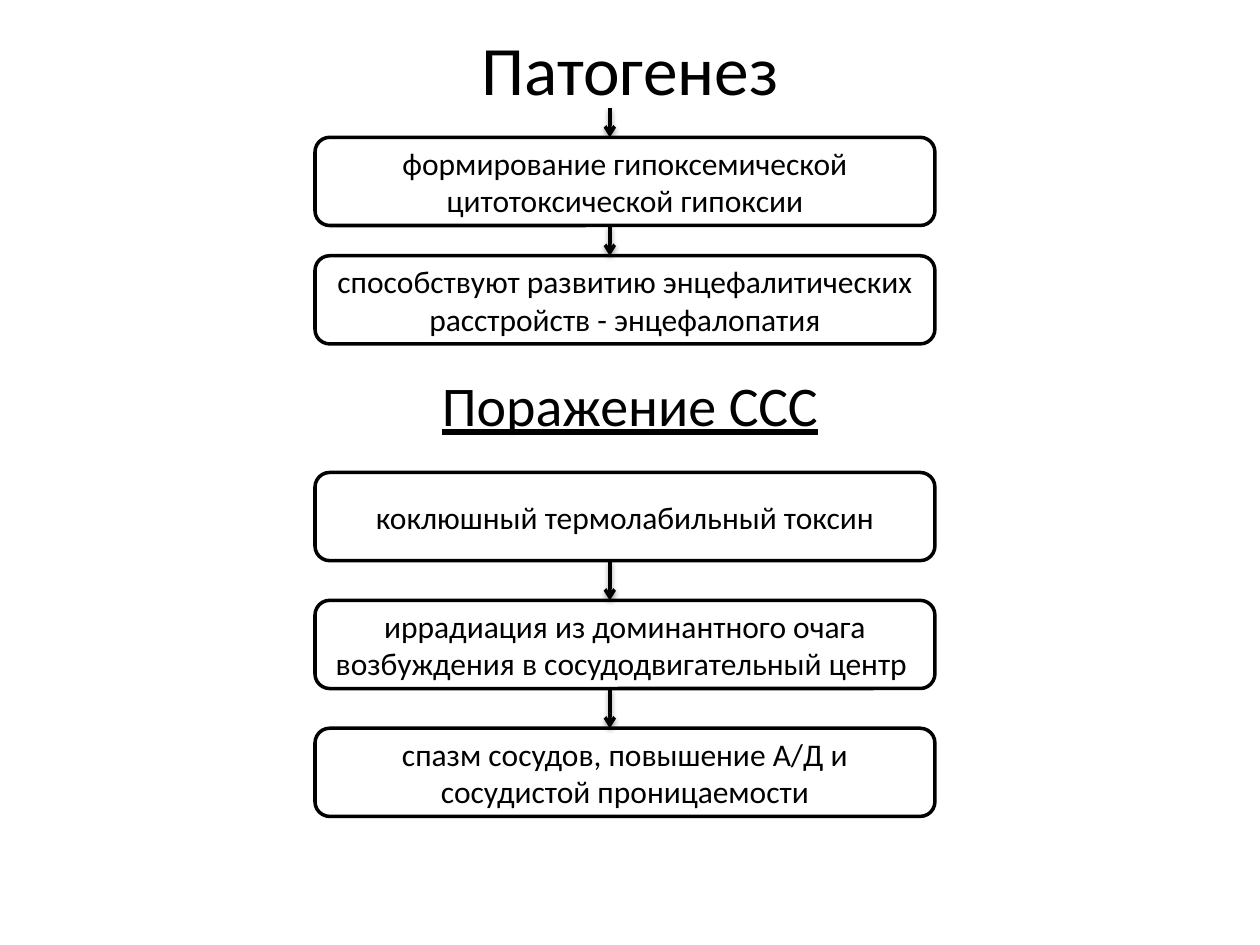
from lxml import etree
from pptx import Presentation
from pptx.dml.color import RGBColor
from pptx.enum.shapes import MSO_CONNECTOR, MSO_SHAPE
from pptx.enum.text import MSO_ANCHOR, PP_ALIGN
from pptx.oxml.ns import qn
from pptx.util import Inches, Pt

COLORS = {"ink": "000000", "paper": "FFFFFF"}
FONT = "Calibri"

# Column shared by all steps, in inches
BOX_LEFT, BOX_WIDTH, BOX_HEIGHT = 2.5, 4.92, 0.7
ARROW_X = 4.84

HYPOXIA_STEPS = [
    "формирование гипоксемической цитотоксической гипоксии",
    "способствуют развитию энцефалитических расстройств - энцефалопатия",
]
VASCULAR_STEPS = [
    "коклюшный термолабильный токсин",
    "иррадиация из доминантного очага возбуждения в сосудодвигательный центр ",
    "спазм сосудов, повышение А/Д и сосудистой проницаемости",
]


def color(name):
    return RGBColor.from_string(COLORS[name])


def set_text(s, text, size, anchor=MSO_ANCHOR.MIDDLE, underline=None):
    tf = s.text_frame
    tf.word_wrap = True
    tf.vertical_anchor = anchor
    tf.text = text
    p = tf.paragraphs[0]
    p.alignment = PP_ALIGN.CENTER
    font = p.runs[0].font
    font.name, font.size, font.underline = FONT, Pt(size), underline
    font.color.rgb = color("ink")


def add_title(slide, text):
    title = slide.shapes.title
    title.left, title.top = Inches(0.5), Inches(0.3)
    title.width, title.height = Inches(9), Inches(0.48)
    set_text(title, text, 39.6)


def add_subtitle(slide, text):
    s = slide.shapes.add_textbox(Inches(0.5), Inches(2.89), Inches(9), Inches(0.64))
    set_text(s, text, 32, MSO_ANCHOR.TOP, underline=True)


def add_step(slide, top, text):
    s = slide.shapes.add_shape(
        MSO_SHAPE.ROUNDED_RECTANGLE,
        Inches(BOX_LEFT), Inches(top), Inches(BOX_WIDTH), Inches(BOX_HEIGHT))
    s.shadow.inherit = False
    s.fill.solid()
    s.fill.fore_color.rgb = color("paper")
    s.line.color.rgb = color("ink")
    s.line.width = Pt(2)
    set_text(s, text, 18)


def add_arrow(slide, top, bottom):
    c = slide.shapes.add_connector(
        MSO_CONNECTOR.STRAIGHT,
        Inches(ARROW_X), Inches(top), Inches(ARROW_X), Inches(bottom))
    c.line.color.rgb = color("ink")
    c.line.width = Pt(2)
    etree.SubElement(c.line._get_or_add_ln(), qn("a:tailEnd"), type="arrow")
    # Soft shadow straight below the line
    effects = etree.SubElement(c._element.spPr, qn("a:effectLst"))
    shadow = etree.SubElement(
        effects, qn("a:outerShdw"), blurRad=str(Pt(3.1)), dist=str(Pt(1.6)),
        dir="5400000", rotWithShape="0")
    tint = etree.SubElement(shadow, qn("a:srgbClr"), val=COLORS["ink"])
    etree.SubElement(tint, qn("a:alpha"), val="38000")


def add_chain(slide, top, pitch, steps):
    """Stack steps at an equal pitch, with an arrow in each gap."""
    for i, text in enumerate(steps):
        y = top + i * pitch
        add_step(slide, y, text)
        if i:
            add_arrow(slide, y - pitch + BOX_HEIGHT, y)


def main():
    prs = Presentation()
    prs.slide_width, prs.slide_height = Inches(10), Inches(7.5)
    slide = prs.slides.add_slide(prs.slide_layouts[5])

    # Title and the chain that follows from it
    add_title(slide, "Патогенез")
    add_arrow(slide, 0.86, 1.09)
    add_chain(slide, 1.09, 0.94, HYPOXIA_STEPS)

    # Cardiovascular section
    add_subtitle(slide, "Поражение ССС")
    add_chain(slide, 3.75, 1.015, VASCULAR_STEPS)

    prs.save("out.pptx")


if __name__ == "__main__":
    main()
